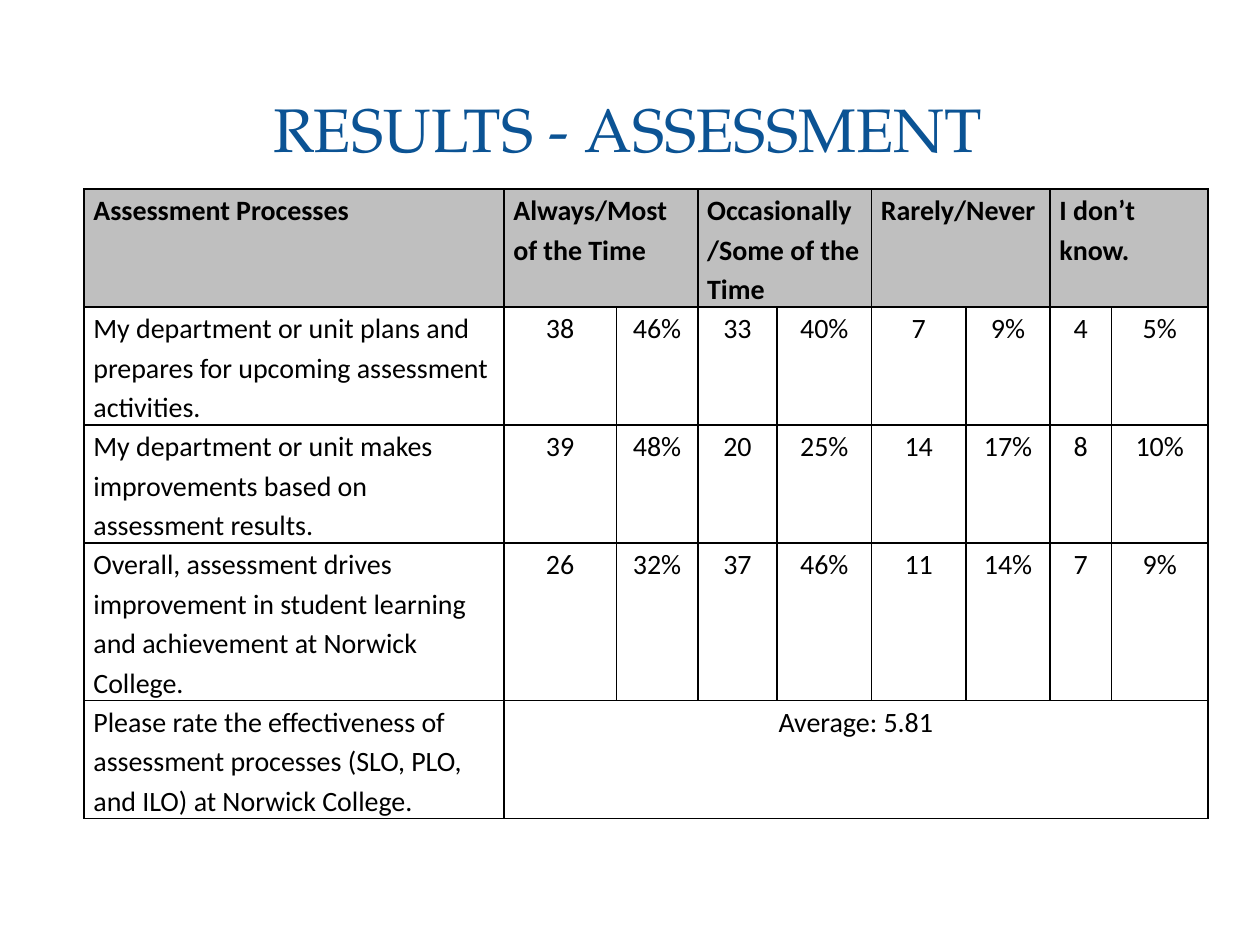
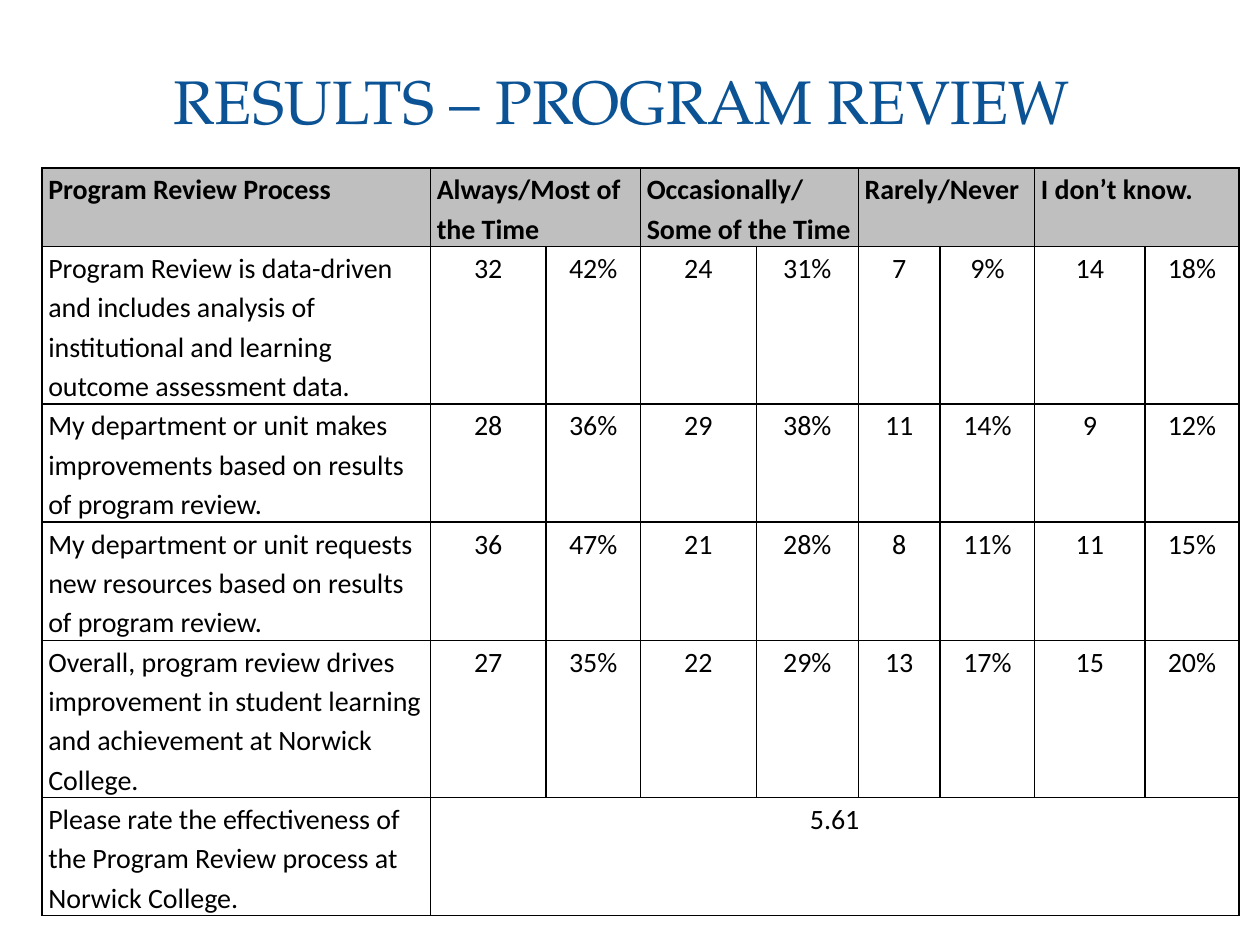
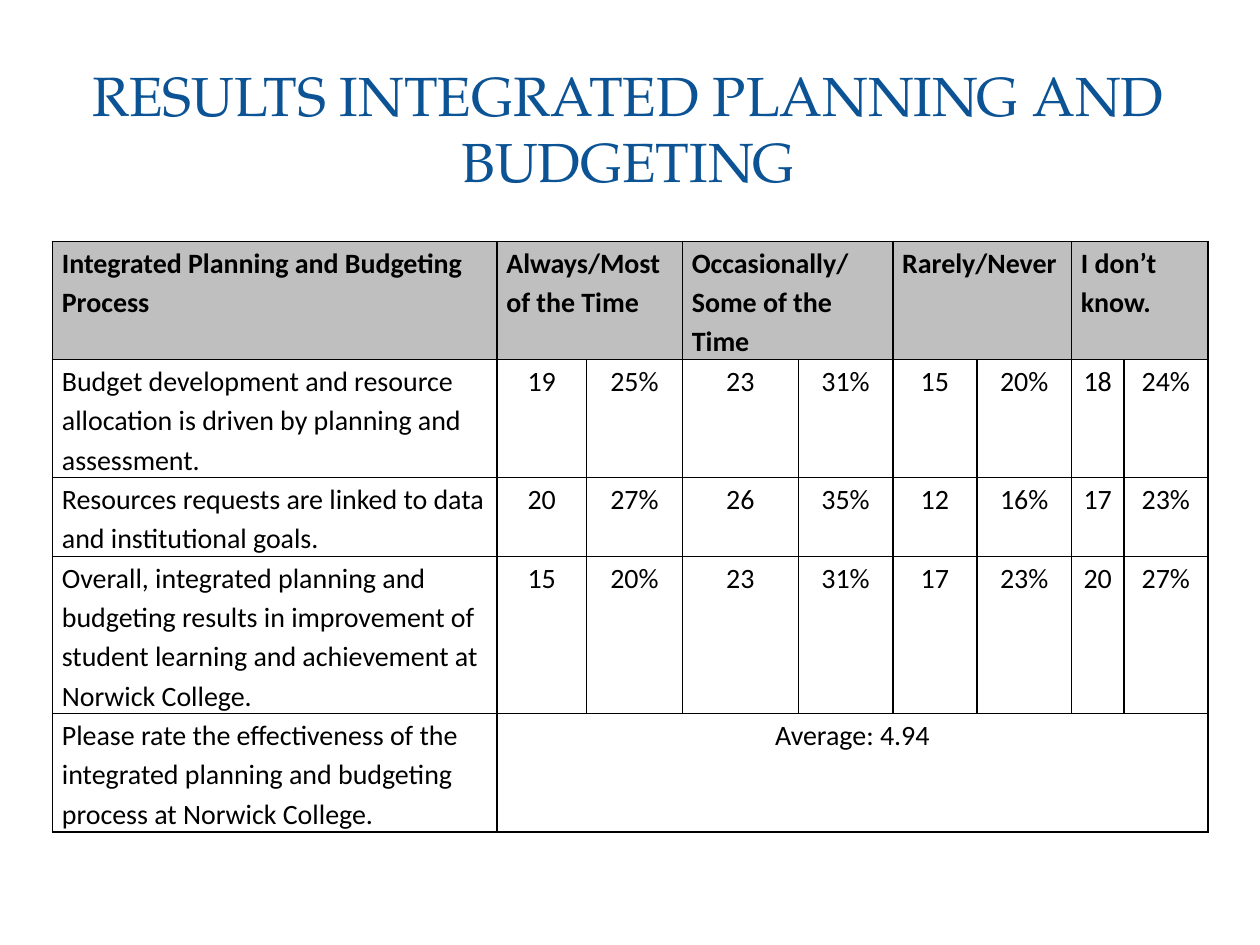
from lxml.etree import SubElement
from pptx import Presentation
from pptx.dml.color import RGBColor
from pptx.enum.shapes import MSO_SHAPE
from pptx.enum.text import MSO_ANCHOR, MSO_AUTO_SIZE, PP_ALIGN
from pptx.oxml.ns import qn
from pptx.util import Pt

COLORS = {"title": "0B5394", "text": "000000", "border": "000000", "header": "BFBFBF",
          "panel": "FFFFFF"}
TITLE_FONT, TABLE_FONT = "TeX Gyre Pagella", "Calibri"
TABLE_SIZE, TABLE_SPACING, LINE_HEIGHT = 16, 1.15, 22.4
CHOICES = ["Always/Most of the Time", "Occasionally/Some of the Time",
           "Rarely/Never", "I don’t know."]

# Boxes are (left, top, width, height); "lines" is the number of text lines in each row.
# Each panel is a preset, its box, its corner rounding and its opacity in percent.
PANELS = [
    (MSO_SHAPE.ROUNDED_RECTANGLE, (7.2, 7.9, 705.6, 524.9), 0.02, 100),
    (MSO_SHAPE.RECTANGLE, (21.6, 21.6, 676.8, 104.4), None, 83),
    (MSO_SHAPE.RECTANGLE, (29.5, 29.5, 660.2, 87.8), None, 100),
]

SURVEYS = [
    {
        "title": "RESULTS - ASSESSMENT",
        "title_box": (33.8, 32.4, 650, 82),
        "title_format": {"size": 35},
        "table_at": (48, 108),
        "columns": [240, 64.2, 46.6, 45.3, 54, 54, 48, 35.2, 55],
        "lines": [3, 3, 3, 4, 3],
        "inset": 5.4,
        "process": "Assessment Processes",
        "answers": [
            ("My department or unit plans and prepares for upcoming assessment activities.",
             "38", "46%", "33", "40%", "7", "9%", "4", "5%"),
            ("My department or unit makes improvements based on assessment results.",
             "39", "48%", "20", "25%", "14", "17%", "8", "10%"),
            ("Overall, assessment drives improvement in student learning and "
             "achievement at Norwick College.",
             "26", "32%", "37", "46%", "11", "14%", "7", "9%"),
        ],
        "rating": ("Please rate the effectiveness of assessment processes (SLO, PLO, "
                   "and ILO) at Norwick College.", "Average: 5.81"),
    },
    {
        "title": "RESULTS – PROGRAM REVIEW ",
        "title_box": (36, 12.2, 648, 90),
        "title_format": {"size": 35},
        "table_at": (24, 96),
        "columns": [222, 66, 54, 66.2, 58.3, 46.8, 54, 63, 53.7],
        "lines": [2, 4, 3, 3, 4, 3],
        "inset": 3.6,
        "process": "Program Review Process",
        "answers": [
            ("Program Review is data-driven and includes analysis of institutional "
             "and learning outcome assessment data.",
             "32", "42%", "24", "31%", "7", "9%", "14", "18%"),
            ("My department or unit makes improvements based on results of program review.",
             "28", "36%", "29", "38%", "11", "14%", "9", "12%"),
            ("My department or unit requests new resources based on results of "
             "program review.",
             "36", "47%", "21", "28%", "8", "11%", "11", "15%"),
            ("Overall, program review drives improvement in student learning and "
             "achievement at Norwick College.",
             "27", "35%", "22", "29%", "13", "17%", "15", "20%"),
        ],
        "rating": ("Please rate the effectiveness of the Program Review process at "
                   "Norwick College.", "5.61"),
    },
    {
        "title": "RESULTS INTEGRATED PLANNING AND BUDGETING",
        "title_box": (33.8, 31.7, 650, 82),
        "title_format": {"size": 31.5, "spacing": Pt(37.8)},
        "table_at": (30, 138),
        "columns": [254, 51.2, 54.8, 66.2, 54, 48.1, 54, 30, 48],
        "lines": [3, 3, 2, 4, 3],
        "inset": 5.4,
        "process": "Integrated Planning and Budgeting Process",
        "answers": [
            ("Budget development and resource allocation is driven by planning and "
             "assessment.",
             "19", "25%", "23", "31%", "15", "20%", "18", "24%"),
            ("Resources requests are linked to data and institutional goals.",
             "20", "27%", "26", "35%", "12", "16%", "17", "23%"),
            ("Overall, integrated planning and budgeting results in improvement of "
             "student learning and achievement at Norwick College.",
             "15", "20%", "23", "31%", "17", "23%", "20", "27%"),
        ],
        "rating": ("Please rate the effectiveness of the integrated planning and "
                   "budgeting process at Norwick College.", "Average: 4.94"),
    },
]


def write(frame, text, font=TABLE_FONT, size=TABLE_SIZE, color="text", bold=False,
          align=PP_ALIGN.LEFT, spacing=None):
    para = frame.paragraphs[0]
    para.alignment = align
    if spacing:
        para.line_spacing = spacing
    span = para.add_run()
    span.text = text
    span.font.name, span.font.size, span.font.bold = font, Pt(size), bold
    span.font.color.rgb = RGBColor.from_string(COLORS[color])


def add_panels(page):
    """Draw the panels once and move them to the back of the layout all slides share."""
    layout_tree = page.slide_layout.shapes.element
    for position, (preset, box, rounding, opacity) in enumerate(PANELS):
        panel = page.shapes.add_shape(preset, *map(Pt, box))
        panel.shadow.inherit = False
        panel.line.fill.background()
        panel.fill.solid()
        panel.fill.fore_color.rgb = RGBColor.from_string(COLORS["panel"])
        if rounding:
            panel.adjustments[0] = rounding
        if opacity < 100:
            color = panel.element.spPr.find(qn("a:solidFill")).find(qn("a:srgbClr"))
            SubElement(color, qn("a:alpha"), val=str(opacity * 1000))
        layout_tree.insert(2 + position, panel.element)


def add_title(page, survey):
    title = page.shapes.title
    title.left, title.top, title.width, title.height = map(Pt, survey["title_box"])
    frame = title.text_frame
    frame.auto_size = MSO_AUTO_SIZE.NONE
    frame.word_wrap = True
    frame.vertical_anchor = MSO_ANCHOR.MIDDLE
    write(frame, survey["title"], font=TITLE_FONT, color="title",
          align=PP_ALIGN.CENTER, **survey["title_format"])


def style_cell(cell, inset, header):
    """Set margins, a thin border on each side, and the fill."""
    cell.margin_left = cell.margin_right = Pt(inset)
    cell.margin_top = cell.margin_bottom = 0
    properties = cell._tc.get_or_add_tcPr()
    for side in ("a:lnL", "a:lnR", "a:lnT", "a:lnB"):
        line = SubElement(properties, qn(side), w=str(Pt(1)))
        fill = SubElement(line, qn("a:solidFill"))
        SubElement(fill, qn("a:srgbClr"), val=COLORS["border"])
    if header:
        cell.fill.solid()
        cell.fill.fore_color.rgb = RGBColor.from_string(COLORS["header"])
    else:
        cell.fill.background()


def add_survey_table(page, survey):
    columns = survey["columns"]
    heights = [lines * LINE_HEIGHT for lines in survey["lines"]]
    left, top = survey["table_at"]
    table = page.shapes.add_table(len(heights), len(columns), Pt(left), Pt(top),
                                  Pt(sum(columns)), Pt(sum(heights))).table
    table.first_row = table.horz_banding = False
    for column, width in zip(table.columns, columns):
        column.width = Pt(width)
    for row, height in zip(table.rows, heights):
        row.height = Pt(height)

    last_row, last_column = len(heights) - 1, len(columns) - 1
    for first in range(1, last_column, 2):
        table.cell(0, first).merge(table.cell(0, first + 1))
    table.cell(last_row, 1).merge(table.cell(last_row, last_column))

    header = [survey["process"]]
    for choice in CHOICES:
        header += [choice, ""]
    rows = [header, *survey["answers"], survey["rating"]]
    for row_index, texts in enumerate(rows):
        is_header = row_index == 0
        for cell in table.rows[row_index].cells:
            style_cell(cell, survey["inset"], is_header)
        for column_index, text in enumerate(texts):
            if text:
                centred = column_index and not is_header
                write(table.cell(row_index, column_index).text_frame, text,
                      bold=is_header, spacing=TABLE_SPACING,
                      align=PP_ALIGN.CENTER if centred else PP_ALIGN.LEFT)


def main():
    deck = Presentation()
    deck.slide_width, deck.slide_height = Pt(720), Pt(540)
    for number, survey in enumerate(SURVEYS):
        page = deck.slides.add_slide(deck.slide_layouts[5])
        if number == 0:
            add_panels(page)
        add_title(page, survey)
        add_survey_table(page, survey)
    deck.save("out.pptx")


if __name__ == "__main__":
    main()
